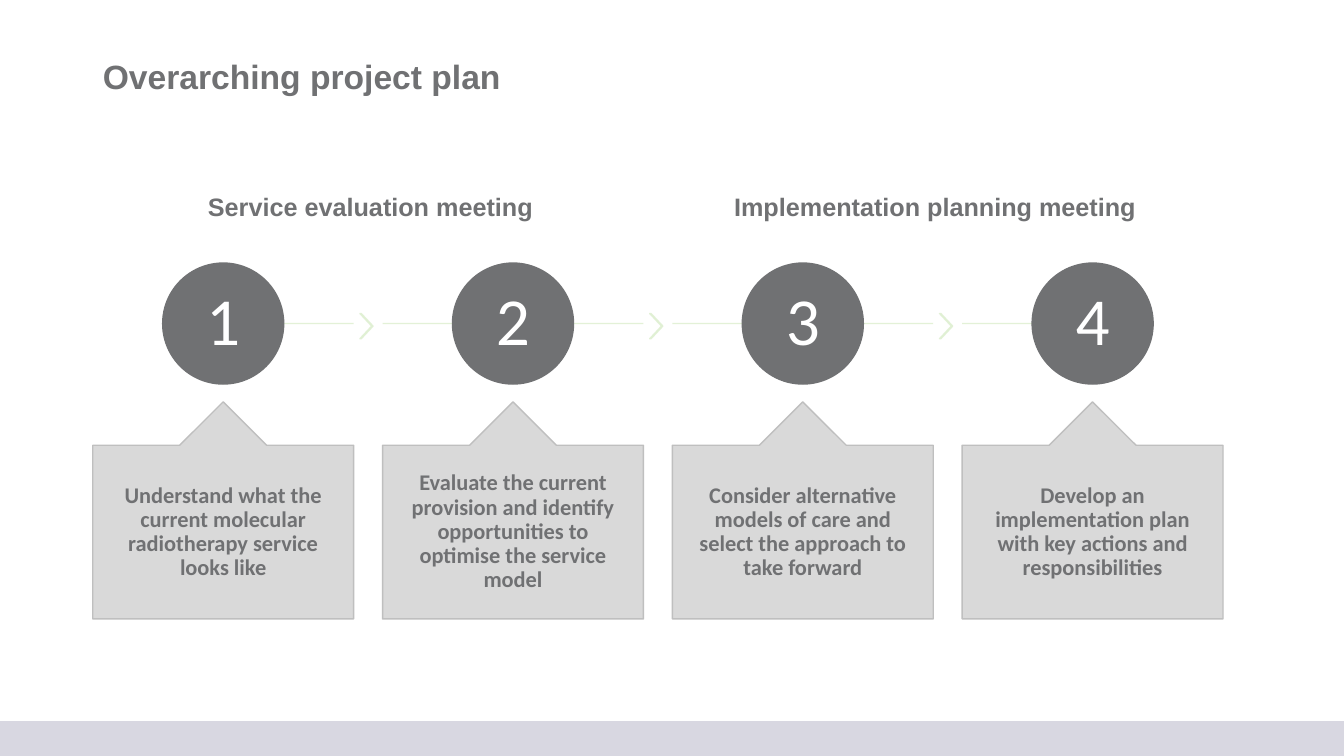
from dataclasses import dataclass

from lxml import etree
from pptx import Presentation
from pptx.dml.color import RGBColor
from pptx.enum.shapes import MSO_CONNECTOR, MSO_SHAPE
from pptx.enum.text import MSO_ANCHOR, MSO_AUTO_SIZE, PP_ALIGN
from pptx.oxml.ns import qn
from pptx.util import Inches, Pt

RECTANGLE = MSO_SHAPE.RECTANGLE
OVAL = MSO_SHAPE.OVAL
CHEVRON = MSO_SHAPE.CHEVRON
CALLOUT = MSO_SHAPE.UP_ARROW_CALLOUT
STRAIGHT = MSO_CONNECTOR.STRAIGHT
MIDDLE = MSO_ANCHOR.MIDDLE
TOP = MSO_ANCHOR.TOP
LEFT = PP_ALIGN.LEFT
CENTER = PP_ALIGN.CENTER
NO_AUTOFIT = MSO_AUTO_SIZE.NONE

SLIDE_WIDTH, SLIDE_HEIGHT = 13.33, 7.5
TITLE_ONLY_LAYOUT = 5
COLUMN_SHARE = 0.9


@dataclass(frozen=True)
class Theme:
    ink: str = "707173"
    paper: str = "FFFFFF"
    panel: str = "D9D9D9"
    panel_edge: str = "BFBFBF"
    link: str = "E0F0D3"
    footer: str = "D8D7E1"
    heading_font: str = "Arial"
    body_font: str = "Calibri"
    title_size: int = 24
    heading_size: int = 18
    body_size: int = 16
    number_size: int = 48
    line_width: int = 1
    link_opacity: int = 90


THEME = Theme()

MEETINGS = ["Service evaluation meeting", "Implementation planning meeting"]
STEPS = [
    "Understand what the current molecular radiotherapy service looks like",
    "Evaluate the current provision and identify opportunities to optimise the service model",
    "Consider alternative models of care and select the approach to take forward",
    "Develop an implementation plan with key actions and responsibilities",
]


def to_inches(box):
    return [Inches(length) for length in box]


def set_opacity(shape, percent):
    for color in shape._element.spPr.iter(qn("a:srgbClr")):
        etree.SubElement(color, qn("a:alpha")).set("val", str(percent * 1000))


def write(shape, text, size, font, color, bold=True, align=CENTER, anchor=MIDDLE,
          insets=(0.1, 0.05), spacing=0.9):
    frame = shape.text_frame
    frame.word_wrap = True
    frame.auto_size = NO_AUTOFIT
    frame.vertical_anchor = anchor
    frame.margin_left = frame.margin_right = Inches(insets[0])
    frame.margin_top = frame.margin_bottom = Inches(insets[1])
    paragraph = frame.paragraphs[0]
    paragraph.alignment = align
    paragraph.line_spacing = spacing
    run = paragraph.add_run()
    run.text = text
    run.font.size = Pt(size)
    run.font.name = font
    run.font.bold = bold
    run.font.color.rgb = RGBColor.from_string(color)


def add_shape(slide, kind, box, fill, edge):
    shape = slide.shapes.add_shape(kind, *to_inches(box))
    shape.shadow.inherit = False
    shape.fill.solid()
    shape.fill.fore_color.rgb = RGBColor.from_string(fill)
    shape.line.color.rgb = RGBColor.from_string(edge)
    shape.line.width = Pt(THEME.line_width)
    return shape


def add_link(slide, start, end, y):
    link = slide.shapes.add_connector(STRAIGHT, *to_inches((start, y, end, y)))
    link.line.color.rgb = RGBColor.from_string(THEME.link)
    link.line.width = Pt(THEME.line_width)
    etree.SubElement(link._element.spPr, qn("a:effectLst"))
    set_opacity(link, THEME.link_opacity)


def add_title(slide, box, text):
    title = slide.shapes.title
    title.left, title.top, title.width, title.height = to_inches(box)
    write(title, text, THEME.title_size, THEME.heading_font, THEME.ink, align=LEFT)


def add_meetings(slide, box):
    left, top, width, height = box
    pitch = width / len(MEETINGS)
    for index, meeting in enumerate(MEETINGS):
        heading = slide.shapes.add_textbox(
            *to_inches((left + index * pitch, top, pitch * 0.88, height)))
        write(heading, meeting, THEME.heading_size, THEME.heading_font, THEME.ink,
              anchor=TOP, spacing=1)


def add_step(slide, box, number, text, is_first, is_last, gap):
    left, top, width, height = box
    center, right = left + width / 2, left + width
    diameter = height * 0.34
    axis = top + diameter / 2
    callout_height = height * 0.61

    add_link(slide, center if is_first else left, center if is_last else right, axis)
    if not is_last:
        chevron = add_shape(slide, CHEVRON, (right + gap * 0.22, axis - 0.1, 0.13, 0.25),
                            THEME.link, THEME.link)
        chevron.adjustments[0] = 0.9
        set_opacity(chevron, THEME.link_opacity)

    circle = add_shape(slide, OVAL, (center - diameter / 2, top, diameter, diameter),
                       THEME.ink, THEME.ink)
    write(circle, str(number), THEME.number_size, THEME.body_font, THEME.paper,
          bold=False, insets=(0.05, 0.05))

    callout = add_shape(slide, CALLOUT,
                        (left, top + height - callout_height, width, callout_height),
                        THEME.panel, THEME.panel_edge)
    for index, share in enumerate((0.4, 0.2, 0.2, 0.8)):
        callout.adjustments[index] = share
    write(callout, text, THEME.body_size, THEME.body_font, THEME.ink, insets=(0.2, 0.18))


def add_steps(slide, box):
    left, top, width, height = box
    pitch = width / (len(STEPS) - 1 + COLUMN_SHARE)
    column = pitch * COLUMN_SHARE
    for index, text in enumerate(STEPS):
        add_step(slide, (left + index * pitch, top, column, height), index + 1, text,
                 index == 0, index == len(STEPS) - 1, pitch - column)


def main():
    presentation = Presentation()
    presentation.slide_width = Inches(SLIDE_WIDTH)
    presentation.slide_height = Inches(SLIDE_HEIGHT)
    slide = presentation.slides.add_slide(presentation.slide_layouts[TITLE_ONLY_LAYOUT])
    add_shape(slide, RECTANGLE, (0, 7.16, SLIDE_WIDTH, SLIDE_HEIGHT - 7.16),
              THEME.footer, THEME.footer)
    add_title(slide, (0.92, 0.4, 11.5, 0.75), "Overarching project plan")
    add_steps(slide, (0.92, 2.61, 11.21, 3.53))
    add_meetings(slide, (1.21, 1.85, 11.2, 0.4))
    presentation.save("out.pptx")


if __name__ == "__main__":
    main()
